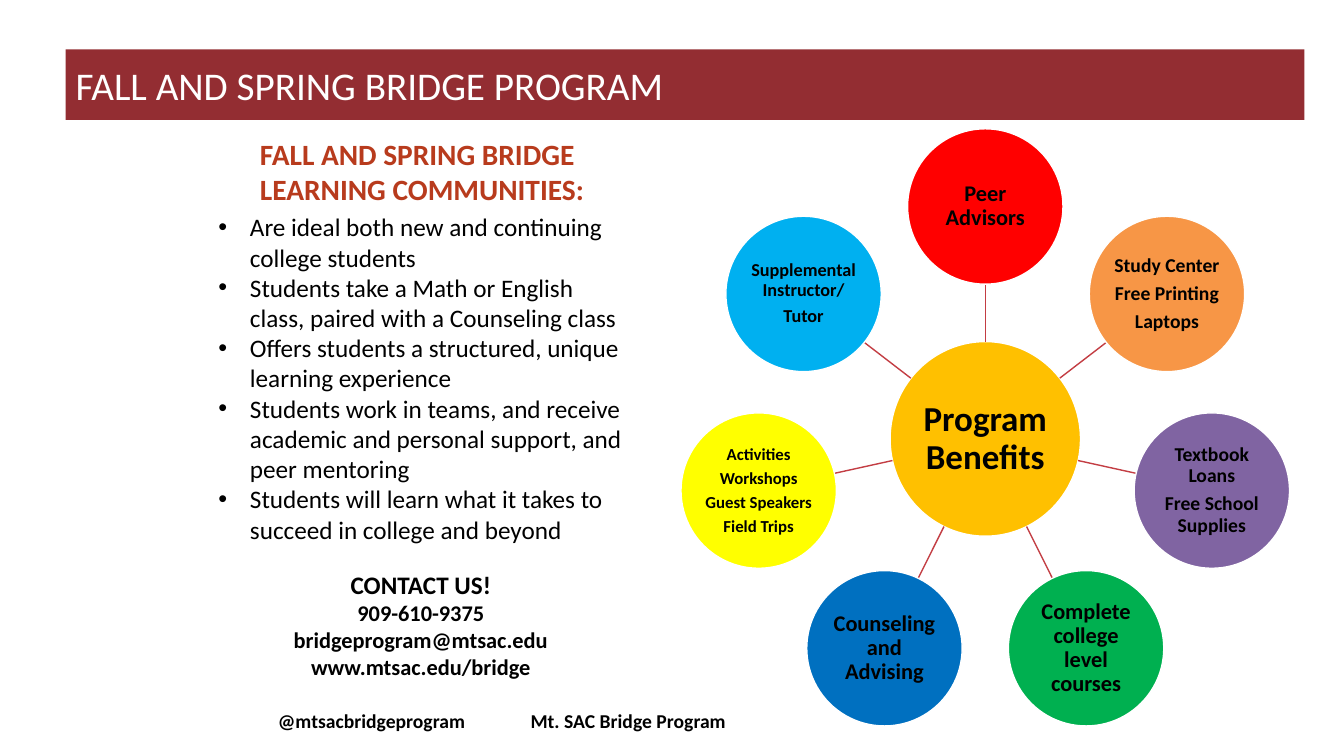
from dataclasses import dataclass
from math import cos, radians, sin

from lxml import etree
from pptx import Presentation
from pptx.dml.color import RGBColor
from pptx.enum.shapes import MSO_CONNECTOR, MSO_SHAPE
from pptx.enum.text import MSO_ANCHOR, PP_ALIGN
from pptx.oxml.ns import qn
from pptx.slide import Slide
from pptx.text.text import TextFrame, _Paragraph
from pptx.util import Pt

LEFT, CENTER = PP_ALIGN.LEFT, PP_ALIGN.CENTER
MIDDLE = MSO_ANCHOR.MIDDLE
OVAL, STRAIGHT = MSO_SHAPE.OVAL, MSO_CONNECTOR.STRAIGHT

FONT = "Calibri"
BLACK, WHITE = "000000", "FFFFFF"
HUB_X, HUB_Y = 703.8, 313.5
HUB_WIDTH, HUB_HEIGHT = 136, 139
BENEFIT_SIZE = 111
ORBIT = 166


@dataclass
class Benefit:
    lines: list[str]
    size: float
    fill: str


BENEFITS = [  # clockwise from the top
    Benefit(["Peer Advisors"], 16, "FF0000"),
    Benefit(["Study Center", "Free Printing", "Laptops"], 14, "F79646"),
    Benefit(["Textbook Loans", "Free School Supplies"], 14, "8064A2"),
    Benefit(["Complete college level courses"], 16, "00B050"),
    Benefit(["Counseling and Advising"], 16, "0070C0"),
    Benefit(["Activities", "Workshops", "Guest Speakers", "Field Trips"], 12, "FFFF00"),
    Benefit(["Supplemental Instructor/", "Tutor"], 13, "00B0F0"),
]

COMMUNITIES = [
    "Are ideal both new and continuing college students",
    "Students take a Math or English class, paired with a Counseling class",
    "Offers students a structured, unique learning experience",
    "Students work in teams, and receive academic and personal support, and peer mentoring",
    "Students will learn what it takes to succeed in college and beyond",
]
CONTACTS = ["CONTACT US!", "909-610-9375", "bridgeprogram@mtsac.edu", "www.mtsac.edu/bridge"]


def rgb(value: str) -> RGBColor:
    return RGBColor.from_string(value)


def write_lines(frame: TextFrame, lines: list[str], size: float, color: str = BLACK,
                bold: bool = False, align: PP_ALIGN = LEFT) -> list[_Paragraph]:
    frame.word_wrap = True
    for number, line in enumerate(lines):
        paragraph = frame.paragraphs[0] if number == 0 else frame.add_paragraph()
        paragraph.text = line
        paragraph.alignment = align
        paragraph.font.name = FONT
        paragraph.font.size = Pt(size)
        paragraph.font.bold = bold
        paragraph.font.color.rgb = rgb(color)
    return list(frame.paragraphs)


def add_text_frame(slide: Slide, left: float, top: float, width: float, height: float) -> TextFrame:
    return slide.shapes.add_textbox(Pt(left), Pt(top), Pt(width), Pt(height)).text_frame


def set_indent(paragraph: _Paragraph, margin: float, first: float = 0) -> None:
    properties = paragraph._p.get_or_add_pPr()
    properties.set("marL", str(Pt(margin)))
    properties.set("indent", str(Pt(first)))


def add_bullet(paragraph: _Paragraph) -> None:
    properties = paragraph._p.get_or_add_pPr()
    font = etree.Element(qn("a:buFont"), typeface="Arial")
    mark = etree.Element(qn("a:buChar"), char="•")
    properties.insert(0, font)
    properties.insert(1, mark)


def add_tab_stop(paragraph: _Paragraph, position: float) -> None:
    tabs = etree.Element(qn("a:tabLst"))
    etree.SubElement(tabs, qn("a:tab"), pos=str(Pt(position)), algn="l")
    paragraph._p.get_or_add_pPr().insert(0, tabs)


def add_circle(slide: Slide, x: float, y: float, width: float, height: float,
               fill: str, lines: list[str], size: float, inset: float) -> None:
    """Draw a labelled ellipse centred on x, y."""
    circle = slide.shapes.add_shape(OVAL, Pt(x - width / 2), Pt(y - height / 2),
                                    Pt(width), Pt(height))
    circle.shadow.inherit = False
    circle.fill.solid()
    circle.fill.fore_color.rgb = rgb(fill)
    circle.line.color.rgb = rgb(WHITE)
    circle.line.width = Pt(1)
    frame = circle.text_frame
    frame.vertical_anchor = MIDDLE
    frame.margin_left = frame.margin_right = Pt(inset)
    frame.margin_top = frame.margin_bottom = Pt(inset)
    for paragraph in write_lines(frame, lines, size, bold=True, align=CENTER):
        paragraph.line_spacing = 0.9
        paragraph.space_after = Pt(0.35 * size)


def add_spoke(slide: Slide, across: float, up: float) -> None:
    """Join the hub's edge to a benefit's edge along a unit direction."""
    reach = ORBIT - BENEFIT_SIZE / 2
    spoke = slide.shapes.add_connector(
        STRAIGHT,
        Pt(HUB_X + across * HUB_WIDTH / 2), Pt(HUB_Y - up * HUB_HEIGHT / 2),
        Pt(HUB_X + across * reach), Pt(HUB_Y - up * reach))
    spoke.line.color.rgb = rgb("C33D43")
    spoke.line.width = Pt(1)
    etree.SubElement(spoke._element.spPr, qn("a:effectLst"))


def add_title(slide: Slide) -> None:
    title = slide.shapes.title
    title.left, title.top, title.width, title.height = Pt(46.8), Pt(35.3), Pt(885), Pt(50.4)
    title.fill.solid()
    title.fill.fore_color.rgb = rgb("932D32")
    title.text_frame.vertical_anchor = MIDDLE
    write_lines(title.text_frame, ["FALL AND SPRING BRIDGE PROGRAM"], 28, WHITE)


def add_program_text(slide: Slide) -> None:
    communities = add_text_frame(slide, 149, 147.6, 302.4, 247)
    for paragraph in write_lines(communities, COMMUNITIES, 18):
        add_bullet(paragraph)
        set_indent(paragraph, 22.5, -22.5)

    contact = add_text_frame(slide, 104.4, 403, 392.4, 87)
    contact_lines = write_lines(contact, CONTACTS, 16, bold=True, align=CENTER)
    contact_lines[0].font.size = Pt(18)

    heading = add_text_frame(slide, 164.2, 93.6, 309, 58.3)
    heading_line, = write_lines(heading, ["FALL AND SPRING BRIDGE LEARNING COMMUNITIES:"],
                                21, "B83B1D", bold=True)
    set_indent(heading_line, 14.4)

    handles = add_text_frame(slide, 191.4, 503, 390, 24)
    handle_line, = write_lines(handles, ["@mtsacbridgeprogram\tMt. SAC Bridge Program"],
                               14, bold=True)
    add_tab_stop(handle_line, 180.5)


def add_benefits_wheel(slide: Slide) -> None:
    add_circle(slide, HUB_X, HUB_Y, HUB_WIDTH, HUB_HEIGHT, "FFC000",
               ["Program Benefits"], 25, 1.2)
    for number, benefit in enumerate(BENEFITS):
        angle = radians(360 * number / len(BENEFITS))
        across, up = sin(angle), cos(angle)
        add_spoke(slide, across, up)
        add_circle(slide, HUB_X + ORBIT * across, HUB_Y - ORBIT * up,
                   BENEFIT_SIZE, BENEFIT_SIZE, benefit.fill, benefit.lines, benefit.size, 0.8)


def main() -> None:
    presentation = Presentation()
    presentation.slide_width, presentation.slide_height = Pt(960), Pt(540)
    slide = presentation.slides.add_slide(presentation.slide_layouts[5])
    add_title(slide)
    add_program_text(slide)
    add_benefits_wheel(slide)
    presentation.save("out.pptx")


if __name__ == "__main__":
    main()
